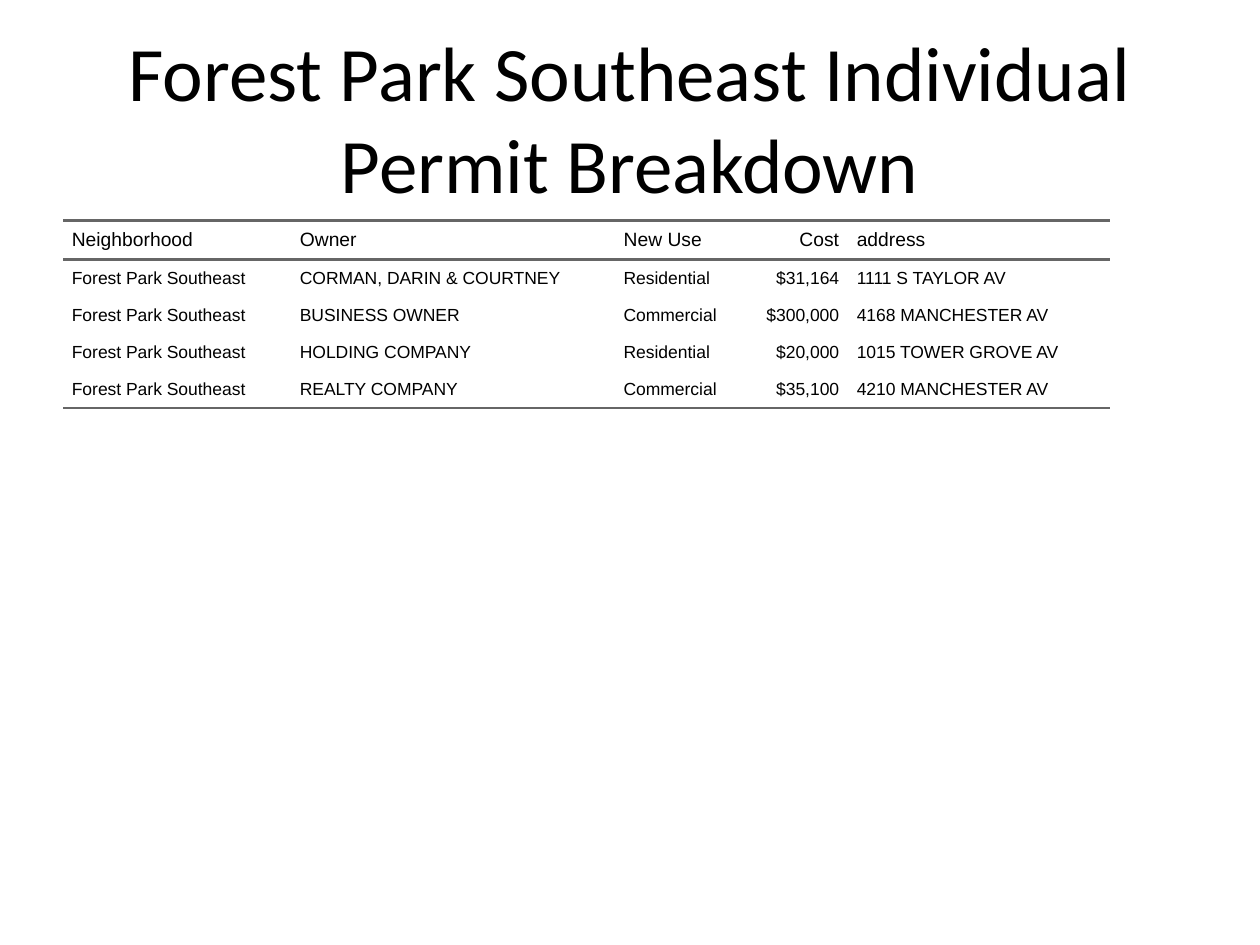
from lxml import etree
from pptx import Presentation
from pptx.dml.color import RGBColor
from pptx.enum.text import MSO_ANCHOR, PP_ALIGN
from pptx.oxml.ns import qn
from pptx.util import Inches, Pt

MIDDLE = MSO_ANCHOR.MIDDLE
LEFT, CENTER, RIGHT = PP_ALIGN.LEFT, PP_ALIGN.CENTER, PP_ALIGN.RIGHT
BLACK = RGBColor(0x00, 0x00, 0x00)
GRAY = RGBColor(0x66, 0x66, 0x66)
PLAIN = "{2D5ABB26-0587-4C30-8999-92F81FD0307C}"  # table style without grid
PAD = Inches(0.07)

AREA = "Forest Park Southeast"
HEADS = ["Neighborhood", "Owner", "New Use", "Cost", "address"]
PERMITS = [
    ["CORMAN, DARIN & COURTNEY", "Residential", "$31,164", "1111 S TAYLOR AV"],
    ["BUSINESS OWNER", "Commercial", "$300,000", "4168 MANCHESTER AV"],
    ["HOLDING COMPANY", "Residential", "$20,000", "1015 TOWER GROVE AV"],
    ["REALTY COMPANY", "Commercial", "$35,100", "4210 MANCHESTER AV"],
]
WIDTHS = [1.81, 2.57, 1.1, 0.75, 2.08]
COST = HEADS.index("Cost")


class Deck:
    def __init__(self, slide):
        self.slide = slide

    def style(self, para, font, size, align):
        para.alignment = align
        for run in para.runs:
            run.font.name = font
            run.font.size = Pt(size)
            run.font.color.rgb = BLACK

    def title(self, text, left, top, width, height):
        shape = self.slide.shapes.title
        shape.left, shape.top = Inches(left), Inches(top)
        shape.width, shape.height = Inches(width), Inches(height)
        frame = shape.text_frame
        frame.text = text
        frame.word_wrap = True
        frame.vertical_anchor = MIDDLE
        self.style(frame.paragraphs[0], "Calibri", 44, CENTER)

    def rule(self, cell, side):
        props = cell._tc.get_or_add_tcPr()
        line = etree.SubElement(props, qn("a:" + side), w=str(Pt(1.5)))
        fill = etree.SubElement(line, qn("a:solidFill"))
        etree.SubElement(fill, qn("a:srgbClr"), val=str(GRAY))

    def cell(self, cell, text, size, align, sides):
        cell.text = text
        cell.vertical_anchor = MIDDLE
        cell.margin_left = cell.margin_right = 0
        cell.margin_top = cell.margin_bottom = PAD
        para = cell.text_frame.paragraphs[0]
        para.space_before = para.space_after = Pt(5)
        self.style(para, "Arial", size, align)
        props = para._p.get_or_add_pPr()
        for key, value in (("marL", PAD), ("marR", PAD), ("indent", 0)):
            props.set(key, str(value))
        for side in sides:
            self.rule(cell, side)
        cell.fill.background()

    def table(self, rows, left, top, width, height):
        frame = self.slide.shapes.add_table(
            len(rows), len(WIDTHS), Inches(left), Inches(top),
            Inches(width), Inches(height))
        table = frame.table
        table.first_row = table.horz_banding = False
        table._tbl.tblPr.find(qn("a:tableStyleId")).text = PLAIN
        for col, size in zip(table.columns, WIDTHS):
            col.width = Inches(size)
        last = len(rows) - 1
        for r, row in enumerate(rows):
            table.rows[r].height = Inches(0.25)
            # Lines around the header and under the last row
            sides = {0: ["lnT", "lnB"], last: ["lnB"]}.get(r, [])
            for c, text in enumerate(row):
                self.cell(table.cell(r, c), text, 10 if r else 11,
                          RIGHT if c == COST else LEFT, sides)
        frame.width, frame.height = Inches(width), Inches(height)


def main():
    prs = Presentation()
    prs.slide_width, prs.slide_height = Inches(10), Inches(7.5)
    deck = Deck(prs.slides.add_slide(prs.slide_layouts[5]))

    # Title
    deck.title("Forest Park Southeast Individual Permit Breakdown",
               0.5, 0.3, 9, 1.25)

    # Permit table
    rows = [HEADS] + [[AREA] + permit for permit in PERMITS]
    deck.table(rows, 0.5, 1.75, 9, 4.95)

    prs.save("out.pptx")


if __name__ == "__main__":
    main()
